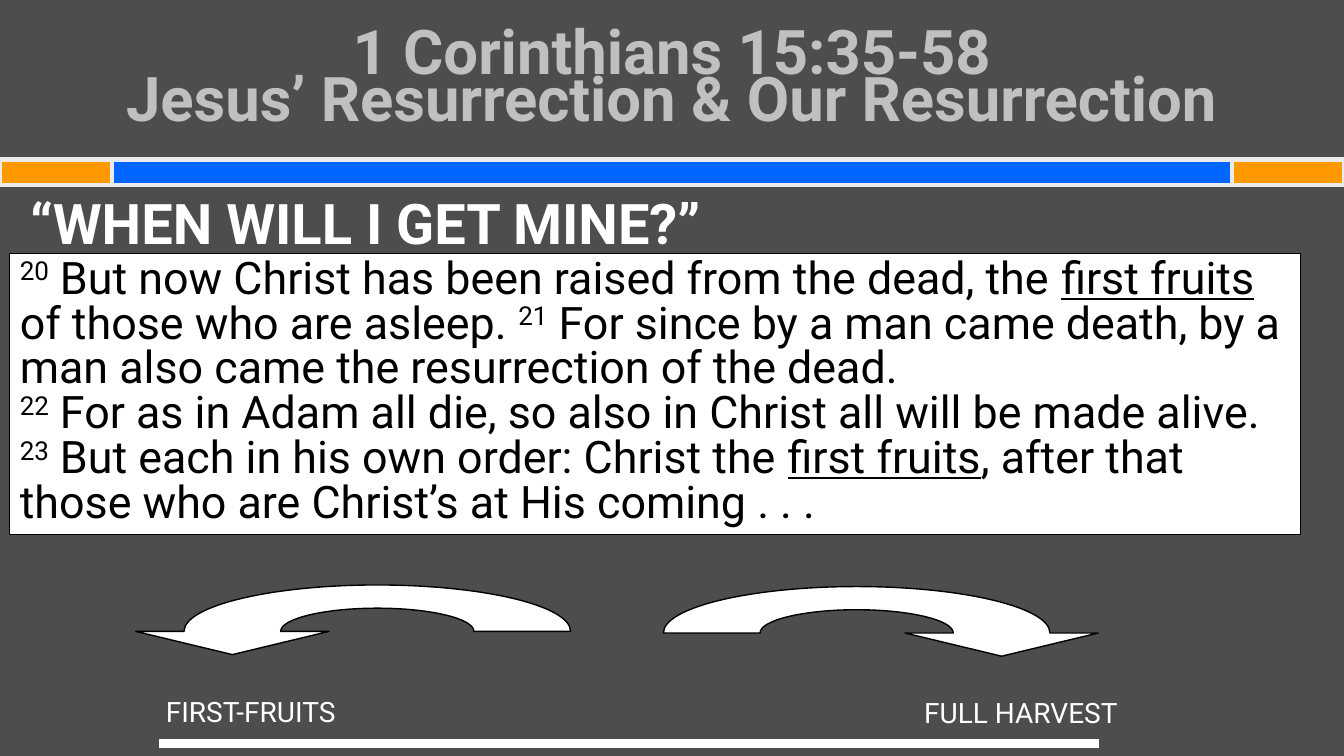
from lxml.etree import SubElement
from pptx import Presentation
from pptx.dml.color import RGBColor
from pptx.enum.shapes import MSO_CONNECTOR, MSO_SHAPE
from pptx.enum.text import MSO_ANCHOR, MSO_AUTO_SIZE, PP_ALIGN
from pptx.oxml.ns import qn
from pptx.util import Cm, Pt

COLORS = {
    "back": "4D4D4D", "blue": "0066FF", "gold": "FF9900", "edge": "EAEAEA",
    "title": "C0C0C0", "white": "FFFFFF", "black": "000000",
}
WIDTH, HEIGHT = 33.87, 19.05
FONT = "Roboto"
TITLE = "1 Corinthians 15:35-58\vJesus’ Resurrection & Our Resurrection"
HEADING = "“WHEN WILL I GET MINE?”"
VERSES = [
    ("20", "super"),
    (" But now Christ has been raised from the dead, the ", ""),
    ("first fruits", "under"),
    (" of those who are asleep. ", ""),
    ("21", "super"),
    (" For since by a man came death, by a man also came the resurrection of the dead. ", "break"),
    ("22", "super"),
    (" For as in Adam all die, so also in Christ all will be made alive. ", ""),
    ("23", "super"),
    (" But each in his own order: Christ the ", ""),
    ("first fruits", "under"),
    (", after that those who are Christ’s at His coming . . .", ""),
]
END = 2.82
BARS = [(0, WIDTH, "blue"), (0, END, "gold"), (WIDTH - END, END, "gold")]
LABELS = [
    ("FIRST-FRUITS", (1.8, 17.51, 9.04, 0.97)),
    ("FULL HARVEST", (20.75, 17.53, 9.96, 0.97)),
]
ARROWS = [(9.51, 15.91, -1), (21.59, 15.95, 1)]
RADIUS, RISE, BEND = 4.87, 1.17, 0.55


def color(name):
    return RGBColor.from_string(COLORS[name])


def paint(shape, fill, line, width):
    shape.shadow.inherit = False
    shape.fill.solid()
    shape.fill.fore_color.rgb = color(fill)
    shape.line.color.rgb = color(line)
    shape.line.width = Pt(width)


def style(para, size, tint, spacing, align=PP_ALIGN.LEFT, bold=False):
    para.alignment = align
    para.line_spacing = spacing
    font = para.font
    font.name, font.size, font.bold = FONT, Pt(size), bold
    font.color.rgb = color(tint)


def add_text(shapes, text, box, *look):
    frame = shapes.add_textbox(*map(Cm, box)).text_frame
    frame.word_wrap = True
    frame.text = text
    style(frame.paragraphs[0], *look)
    return frame.paragraphs[0]


def add_title(shape):
    shape.left, shape.top, shape.width, shape.height = map(Cm, (1.7, 0.76, 30.48, 2.84))
    frame = shape.text_frame
    frame.text = TITLE
    frame.auto_size = MSO_AUTO_SIZE.NONE
    frame.vertical_anchor = MSO_ANCHOR.MIDDLE
    style(frame.paragraphs[0], 44, "title", Pt(34), PP_ALIGN.CENTER, True)


def add_verses(shapes):
    box = shapes.add_shape(MSO_SHAPE.RECTANGLE, *map(Cm, (0.25, 6.39, 32.53, 7.08)))
    paint(box, "white", "black", 0.75)
    frame = box.text_frame
    frame.word_wrap = True
    frame.vertical_anchor = MSO_ANCHOR.TOP
    para = frame.paragraphs[0]
    style(para, 32, "black", Pt(32))
    for text, kind in VERSES:
        run = para.add_run()
        run.text = text
        if kind == "super":
            run.font._element.set("baseline", "30000")
        elif kind == "under":
            run.font.underline = True
        elif kind == "break":
            para.add_line_break()


def arch(scale):
    half = [(-1, 0), (-1, -BEND), (-BEND, -1), (0, -1), (BEND, -1), (1, -BEND), (1, 0)]
    return [(scale * RADIUS * x, scale * RISE * y) for x, y in half]


def add_arrow(shapes, x, y, side):
    head = [(1.25 * RADIUS, 0), (0.75 * RADIUS, RISE / 2), (RADIUS / 4, 0)]
    points = arch(0.5)[::-1] + arch(1) + head
    spots = [(Cm(x + side * dx), Cm(y + dy)) for dx, dy in points]
    build = shapes.build_freeform(*spots[0])
    build.add_line_segments(spots[1:], close=True)
    shape = build.convert_to_shape()
    lines = list(shape._element.iter(qn("a:lnTo")))
    for first in (0, 3, 7, 10):
        curve = lines[first]
        curve.tag = qn("a:cubicBezTo")
        for line in lines[first + 1:first + 3]:
            curve.append(line[0])
            line.getparent().remove(line)
    paint(shape, "white", "black", 1)


def main():
    deck = Presentation()
    deck.slide_width, deck.slide_height = Cm(WIDTH), Cm(HEIGHT)
    slide = deck.slides.add_slide(deck.slide_layouts[5])
    slide.background.fill.solid()
    slide.background.fill.fore_color.rgb = color("back")
    shapes = slide.shapes

    add_title(shapes.title)
    for left, width, fill in BARS:
        bar = shapes.add_shape(MSO_SHAPE.RECTANGLE, *map(Cm, (left, 4.02, width, 0.64)))
        paint(bar, fill, "edge", 3)

    heading = add_text(shapes, HEADING, (0.51, 5.08, 32.74, 13.54), 40, "white", 0.7, PP_ALIGN.LEFT, True)
    heading.space_before = Pt(4)
    add_verses(shapes)

    rule = shapes.add_connector(MSO_CONNECTOR.STRAIGHT, *map(Cm, (4.01, 18.74, 27.7, 18.74)))
    rule.line.color.rgb = color("white")
    rule.line.width = Pt(6)
    SubElement(rule._element.spPr, qn("a:effectLst"))

    for arrow in ARROWS:
        add_arrow(shapes, *arrow)
    for text, box in LABELS:
        add_text(shapes, text, box, 20, "white", Pt(20), PP_ALIGN.CENTER)
    deck.save("out.pptx")


if __name__ == "__main__":
    main()
